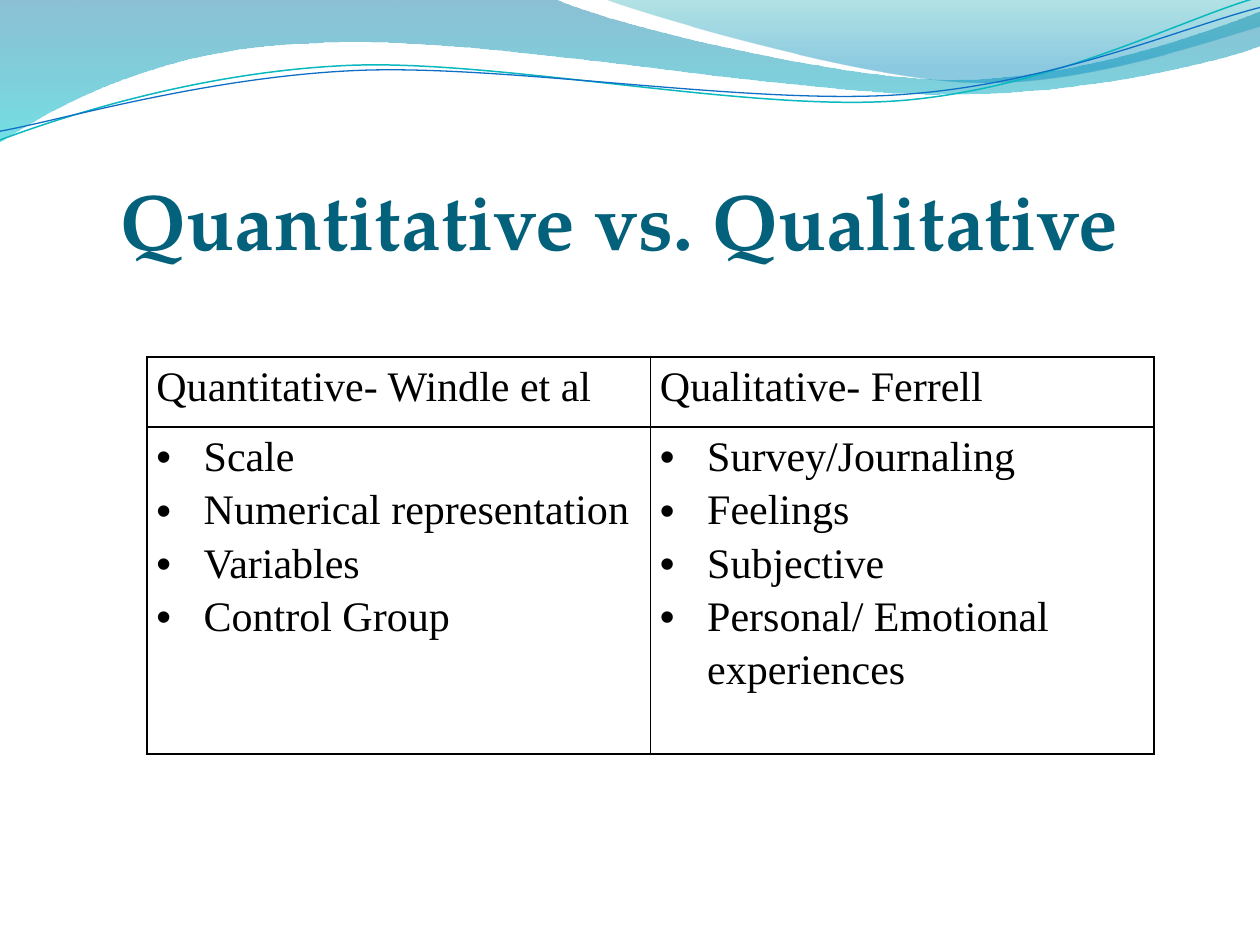
from lxml.etree import SubElement
from pptx import Presentation
from pptx.dml.color import RGBColor
from pptx.enum.text import MSO_ANCHOR, PP_ALIGN
from pptx.oxml.ns import qn
from pptx.util import Pt

COLORS = {
    "title": "04617B", "text": "000000", "border": "000000",
    "deep_blue": "0074A1", "cyan": "00C6CF", "teal": "00A1A9", "sky": "008BBF",
    "teal_line": "0AB8BF", "blue_line": "0F6FC6",
}
TITLE_FONT, TABLE_FONT = "TeX Gyre Pagella", "Times New Roman"

WIDE_WAVE = [
    (0, 0), (317, -0.7), (343, 12.2, 478, 45.4, 546, 45.4),
    (614, 45.4, 690, 18.7, 720, 6.5), (721, 26),
    (708, 31.7, 626, 54.7, 537, 54), (448, 54, 275, 20, 185, 24.5),
    (93, 26, 33, 60, -0.7, 81.4), (0, 0),
]
RIGHT_WAVE = [
    (345, -0.7), (366.5, 7.9, 491, 44.6, 554, 46.8),
    (616, 49.7, 692, 23, 720, 15), (720, 0), (345, -0.7),
]
TEAL_CURVE = [
    (0, 80), (34.6, 67, 114, 41, 199.4, 37.4),
    (284.4, 33.8, 427, 64, 513.4, 57.6), (600, 51, 675, 10.8, 718.6, -1.4),
]
BLUE_CURVE = [
    (0, 75), (33.8, 69, 118, 44, 204, 40.3),
    (290, 36.7, 430, 60.5, 516, 54), (602, 48, 677.5, 15, 720, 4.3),
]
COLUMNS = [
    ("Quantitative- Windle et al",
     ["Scale", "Numerical representation", "Variables", "Control Group"]),
    ("Qualitative- Ferrell",
     ["Survey/Journaling", "Feelings", "Subjective",
      "Personal/ Emotional experiences"]),
]


def rgb(name):
    """Return the named palette colour."""
    return RGBColor.from_string(COLORS[name])


def add_outline(slide, segments, left, top, close):
    """Draw a freeform of lines and cubic curves offset by the given corner."""
    start, *anchors = [(Pt(left + s[-2]), Pt(top + s[-1])) for s in segments]
    builder = slide.shapes.build_freeform(*start)
    builder.add_line_segments(anchors, close=close)
    outline = builder.convert_to_shape()
    outline.shadow.inherit = False
    strokes = list(outline.element.iter(qn("a:lnTo")))
    for stroke, segment in zip(strokes, segments[1:]):
        if len(segment) == 6:
            curve = SubElement(stroke.getparent(), qn("a:cubicBezTo"))
            for x, y in zip(segment[::2], segment[1::2]):
                SubElement(curve, qn("a:pt"), x=str(Pt(left + x) - outline.left),
                           y=str(Pt(top + y) - outline.top))
            stroke.getparent().replace(stroke, curve)
    return outline


def add_wave(slide, segments, left, top, stops):
    """Draw a wave with a translucent vertical gradient."""
    wave = add_outline(slide, segments, left, top, True)
    wave.line.fill.background()
    wave.fill.gradient()
    wave.fill.gradient_angle = 270
    for stop, (position, color, _) in zip(wave.fill.gradient_stops, stops):
        stop.position = position
        stop.color.rgb = rgb(color)
    for color_element, (_, _, opacity) in zip(wave.element.iter(qn("a:srgbClr")), stops):
        SubElement(color_element, qn("a:alpha"), val=str(opacity * 1000))


def add_header(slide, left, top):
    """Draw the waves and curves along the top edge."""
    add_wave(slide, WIDE_WAVE, left, top, [(0, "deep_blue", 45), (1, "cyan", 55)])
    add_wave(slide, RIGHT_WAVE, left, top, [(0, "teal", 30), (0.8, "sky", 45)])
    for segments, color, width in [(TEAL_CURVE, "teal_line", 0.85),
                                   (BLUE_CURVE, "blue_line", 0.75)]:
        curve = add_outline(slide, segments, left, top, False)
        curve.fill.background()
        curve.line.color.rgb = rgb(color)
        curve.line.width = Pt(width)


def add_run(paragraph, text, font, size, color, bold=False):
    """Append one formatted run."""
    run = paragraph.add_run()
    run.text = text
    run.font.name = font
    run.font.size = Pt(size)
    run.font.bold = bold
    run.font.color.rgb = rgb(color)


def add_title(slide, left, top, width, height):
    """Place and fill the title placeholder."""
    title = slide.shapes.title
    title.left, title.top, title.width, title.height = map(Pt, (left, top, width, height))
    frame = title.text_frame
    frame.word_wrap = True
    frame.vertical_anchor = MSO_ANCHOR.BOTTOM
    frame.margin_left = frame.margin_right = 0
    frame.margin_top, frame.margin_bottom = Pt(3.6), Pt(54)
    heading = frame.paragraphs[0]
    heading.alignment = PP_ALIGN.CENTER
    add_run(heading, "Quantitative vs. Qualitative", TITLE_FONT, 45, "title", True)


def fill_cell(cell, lines, bulleted):
    """Write the lines into a cell with borders and no fill."""
    cell.margin_left = cell.margin_right = Pt(5.4)
    cell.margin_top = cell.margin_bottom = 0
    properties = cell._tc.get_or_add_tcPr()
    for side in ("lnL", "lnR", "lnT", "lnB"):
        border = SubElement(properties, qn(f"a:{side}"), w=str(Pt(1)))
        solid = SubElement(border, qn("a:solidFill"))
        SubElement(solid, qn("a:srgbClr"), val=COLORS["border"])
    cell.fill.background()
    frame = cell.text_frame
    for index, line in enumerate(lines):
        paragraph = frame.add_paragraph() if index else frame.paragraphs[0]
        paragraph.line_spacing = 1.15
        if bulleted:
            layout = paragraph._p.get_or_add_pPr()
            layout.set("marL", str(Pt(27)))
            layout.set("indent", str(-Pt(27)))
            SubElement(layout, qn("a:buFont"), typeface="Arial")
            SubElement(layout, qn("a:buChar"), char="•")
        add_run(paragraph, line, TABLE_FONT, 24, "text")


def add_comparison(slide, left, top, width, height):
    """Place the two-column comparison table."""
    table = slide.shapes.add_table(
        2, len(COLUMNS), Pt(left), Pt(top), Pt(width), Pt(height)).table
    table.first_row = table.horz_banding = False
    header_height = 40
    table.rows[0].height = Pt(header_height)
    table.rows[1].height = Pt(height - header_height)
    for index, (study, traits) in enumerate(COLUMNS):
        table.columns[index].width = Pt(width / len(COLUMNS))
        fill_cell(table.cell(0, index), [study], False)
        fill_cell(table.cell(1, index), traits, True)


def main():
    """Build and save the slide."""
    deck = Presentation()
    deck.slide_width, deck.slide_height = Pt(720), Pt(540)
    slide = deck.slides.add_slide(deck.slide_layouts[5])
    add_header(slide, 0, 0)
    add_title(slide, 30, 114, 648, 92)
    add_comparison(slide, 84, 204, 575.5, 227)
    deck.save("out.pptx")


if __name__ == "__main__":
    main()
